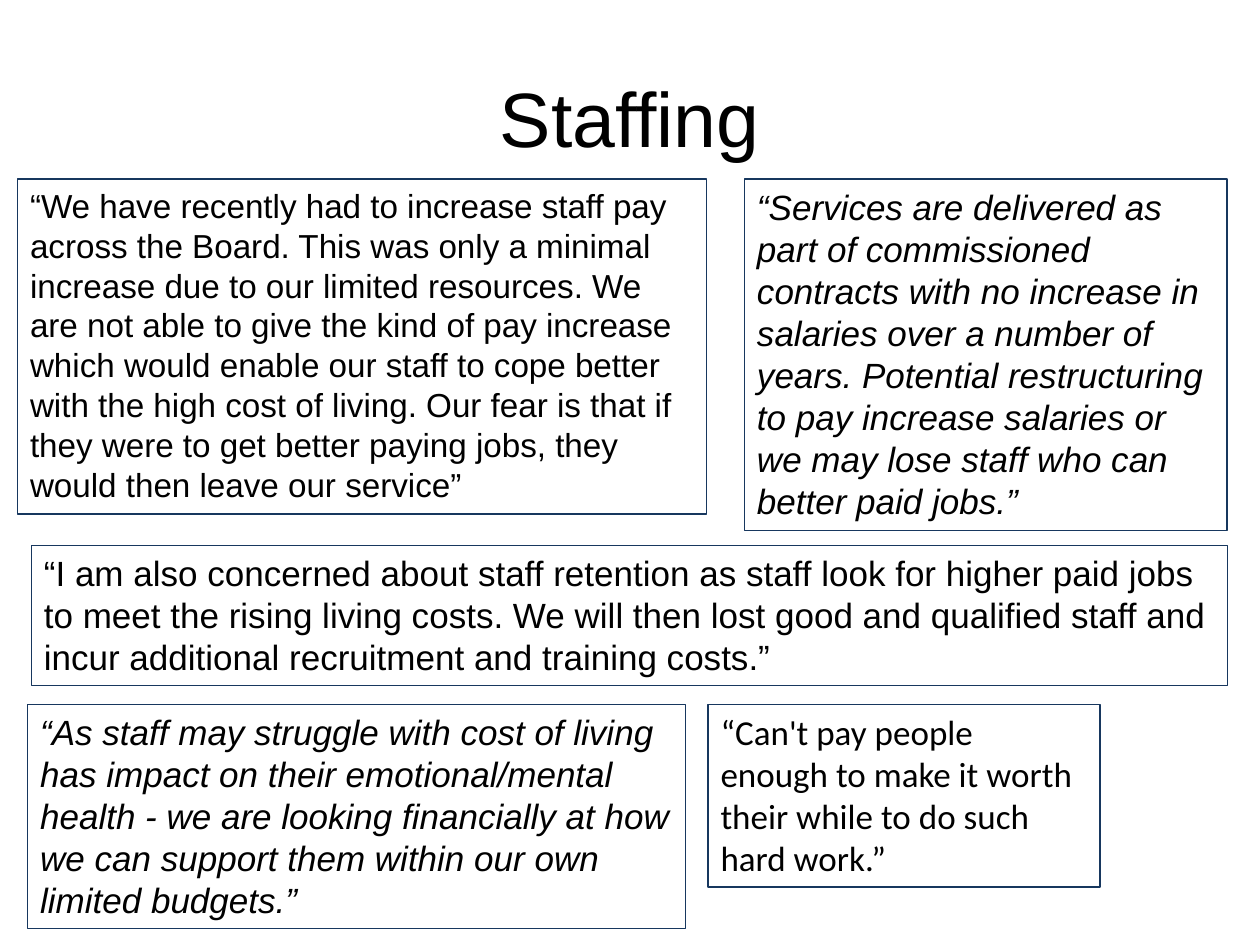
import dataclasses

import pptx
import pptx.dml.color
import pptx.enum.shapes
import pptx.enum.text
import pptx.util


@dataclasses.dataclass(frozen=True)
class Theme:
    ink: str = "000000"
    border: str = "17375E"
    font: str = "Arial"
    alt_font: str = "Calibri"
    title_size: int = 44
    quote_size: int = 20
    small_size: int = 19
    border_width: float = 0.75
    columns: int = 100
    rows: int = 75


class QuoteSlide:
    def __init__(self, prs, theme):
        self.theme = theme
        self.s = prs.slides.add_slide(prs.slide_layouts[6])
        self.col = prs.slide_width / theme.columns
        self.row = prs.slide_height / theme.rows

    def place(self, left, top, width, height):
        return (round(left * self.col), round(top * self.row),
                round(width * self.col), round(height * self.row))

    def set_text(self, sp, text, size, font, italic=False):
        tf = sp.text_frame
        tf.word_wrap = True
        p = tf.paragraphs[0]
        p.text = text
        p.font.size = pptx.util.Pt(size)
        p.font.name = font
        p.font.italic = italic
        p.font.color.rgb = pptx.dml.color.RGBColor.from_string(self.theme.ink)
        return tf, p

    def title(self, text, box):
        sp = self.s.shapes.add_textbox(*self.place(*box))
        tf, p = self.set_text(sp, text, self.theme.title_size, self.theme.font)
        tf.vertical_anchor = pptx.enum.text.MSO_ANCHOR.MIDDLE
        p.alignment = pptx.enum.text.PP_ALIGN.CENTER

    def quote(self, text, box, size=None, font=None, italic=False, spacing=0):
        theme = self.theme
        sp = self.s.shapes.add_shape(
            pptx.enum.shapes.MSO_SHAPE.RECTANGLE, *self.place(*box))
        sp.shadow.inherit = False
        sp.fill.background()
        sp.line.color.rgb = pptx.dml.color.RGBColor.from_string(theme.border)
        sp.line.width = pptx.util.Pt(theme.border_width)
        tf, p = self.set_text(sp, text, size or theme.quote_size,
                              font or theme.font, italic)
        tf.auto_size = pptx.enum.text.MSO_AUTO_SIZE.SHAPE_TO_FIT_TEXT
        tf.vertical_anchor = pptx.enum.text.MSO_ANCHOR.TOP
        p.alignment = pptx.enum.text.PP_ALIGN.LEFT
        p.space_before = p.space_after = pptx.util.Pt(spacing)


def main():
    prs = pptx.Presentation()
    prs.slide_width = pptx.util.Inches(10)
    prs.slide_height = pptx.util.Inches(7.5)
    theme = Theme()
    slide = QuoteSlide(prs, theme)
    top_row, middle_row, bottom_row = 14.2, 43.3, 55.9

    slide.title("Staffing", (5, 3, 90, 12.5))
    slide.quote(
        "“We have recently had to increase staff pay across the Board. "
        "This was only a minimal increase due to our limited resources. "
        "We are not able to give the kind of pay increase which would enable "
        "our staff to cope better with the high cost of living. Our fear is "
        "that if they were to get better paying jobs, they would then leave "
        "our service”",
        (1.4, top_row, 54.7, 26.6), size=theme.small_size, spacing=6)
    slide.quote(
        "“Services are delivered as part of commissioned contracts with no "
        "increase in salaries over a number of years. Potential restructuring "
        "to pay increase salaries or we may lose staff who can better paid "
        "jobs.”",
        (59.1, top_row, 38.3, 27.9), italic=True)
    slide.quote(
        "“As staff may struggle with cost of living has impact on their "
        "emotional/mental health - we are looking financially at how we can "
        "support them within our own limited budgets.”",
        (2.2, bottom_row, 52.2, 17.8), italic=True)
    slide.quote(
        "“Can't pay people enough to make it worth their while to do such "
        "hard work.”",
        (56.2, bottom_row, 31.1, 14.5), font=theme.alt_font)
    slide.quote(
        "“I am also concerned about staff retention as staff look for higher "
        "paid jobs to meet the rising living costs. We will then lost good "
        "and qualified staff and incur additional recruitment and training "
        "costs.”",
        (2.5, middle_row, 94.9, 11.1))
    prs.save("out.pptx")


if __name__ == "__main__":
    main()
